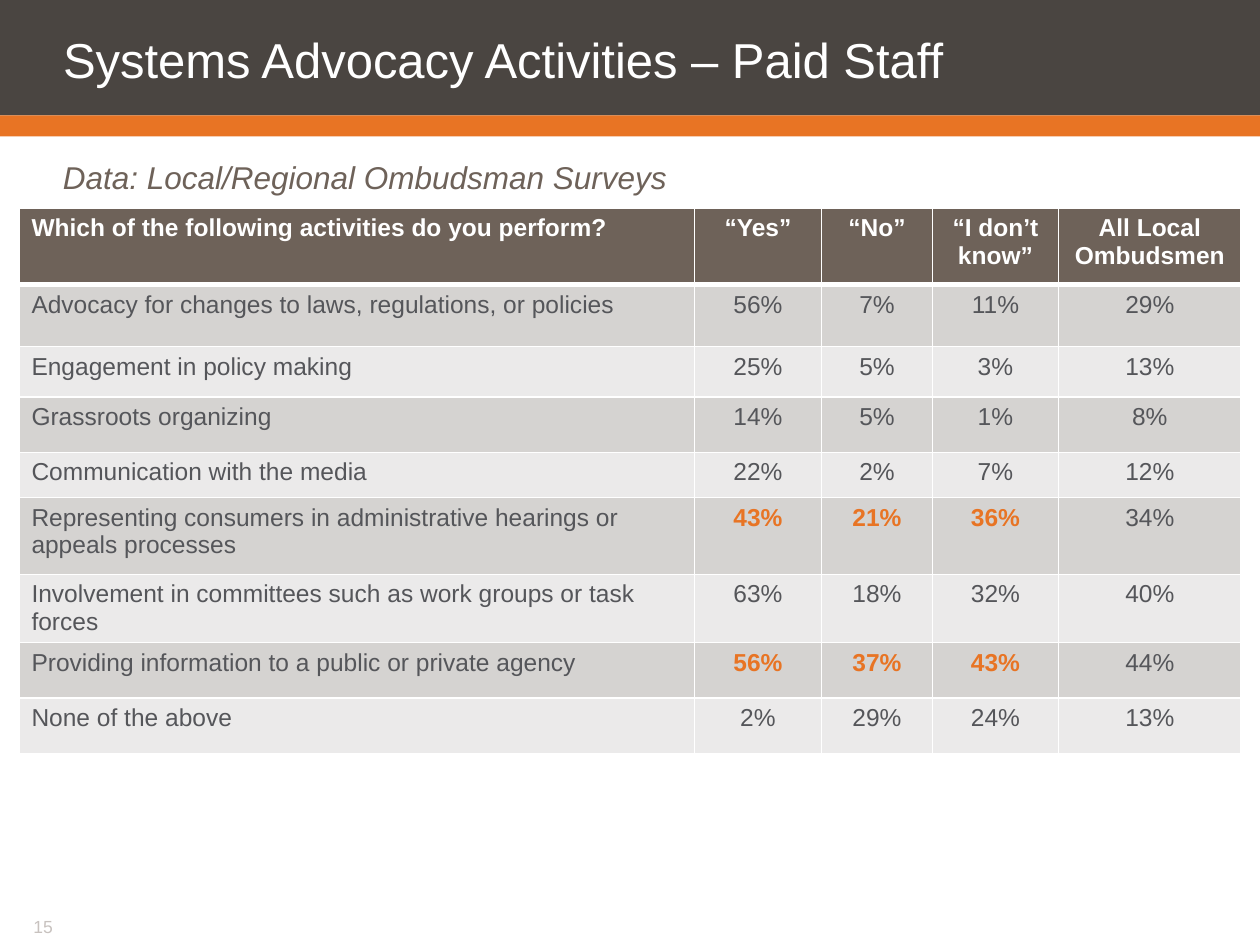
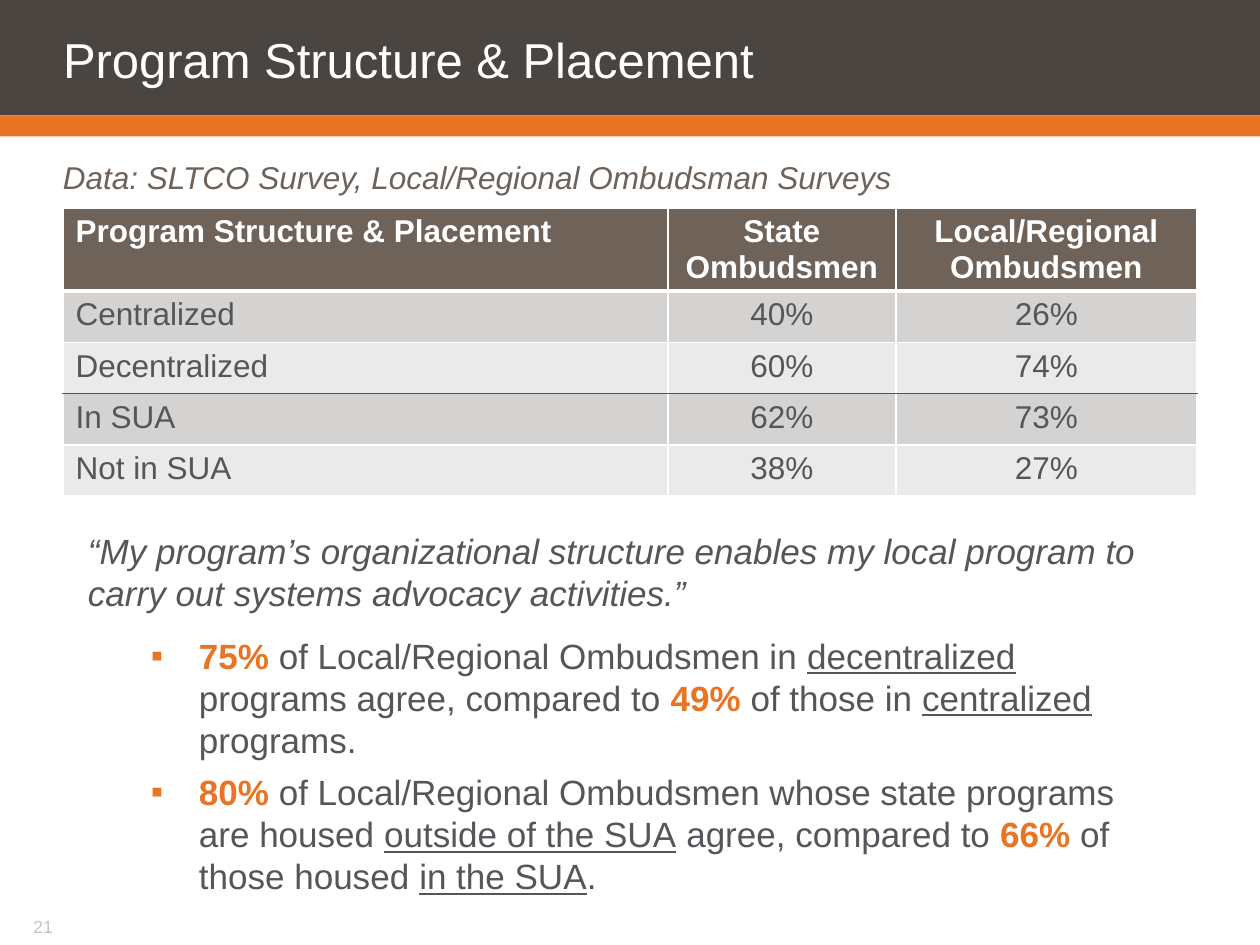
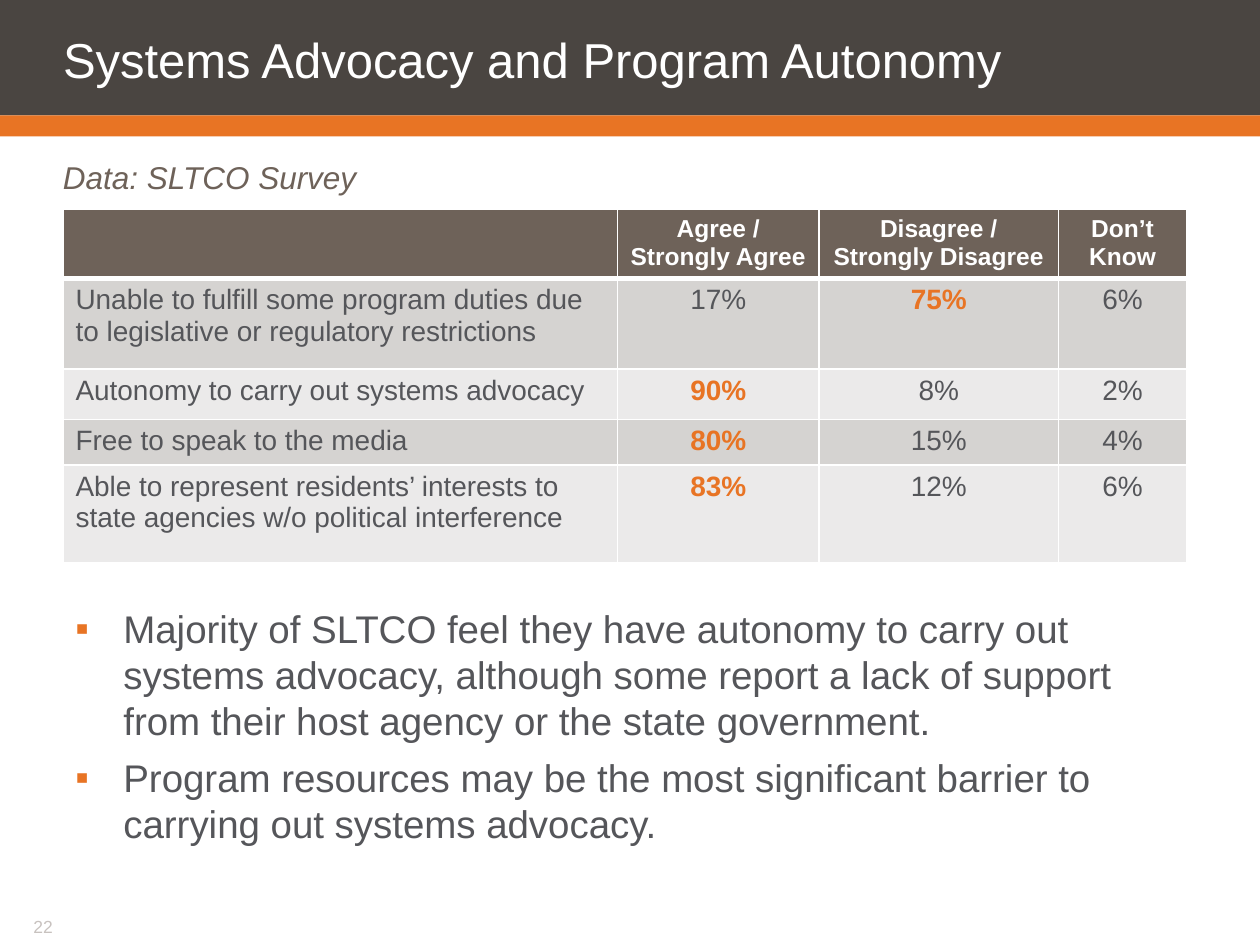
from lxml.etree import SubElement
from pptx import Presentation
from pptx.dml.color import RGBColor
from pptx.enum.shapes import MSO_SHAPE
from pptx.enum.text import MSO_ANCHOR, MSO_AUTO_SIZE, PP_ALIGN
from pptx.oxml.ns import qn
from pptx.util import Pt

FONT = "Arial"
DARK, ORANGE, BROWN, INK = "4A4541", "E87424", "6E6259", "55565A"
WHITE, GREY = "FFFFFF", "C8C2BF"
ROW_FILLS = ("EBEAEA", "D5D3D1")

KEY = dict(bold=True, color=ORANGE)
UNDER = dict(underline=True)
QUOTE = dict(italic=True)


def add_run(p, text, size=18, color=INK, bold=False, italic=False, underline=False):
    r = p.add_run()
    r.text = text
    r.font.name = FONT
    r.font.size = Pt(size)
    r.font.color.rgb = RGBColor.from_string(color)
    r.font.bold = bold
    r.font.italic = italic
    r.font.underline = underline


def set_frame(tf, left=7.2, top=3.6, right=7.2, bottom=3.6, anchor=MSO_ANCHOR.TOP):
    """Set wrapping, insets and anchor; return the first paragraph."""
    tf.word_wrap = True
    tf.auto_size = MSO_AUTO_SIZE.NONE
    tf.margin_left, tf.margin_top = Pt(left), Pt(top)
    tf.margin_right, tf.margin_bottom = Pt(right), Pt(bottom)
    tf.vertical_anchor = anchor
    p = tf.paragraphs[0]
    p.alignment = PP_ALIGN.LEFT
    return p


# A leading * marks a highlighted table value.
# Body paragraphs are (left indent, space after, runs); an indent means a bullet.
SLIDES = [
    dict(
        number="15",
        title="Systems Advocacy Activities – Paid Staff",
        source="Data: Local/Regional Ombudsman Surveys",
        table_at=(10.8, 118.8),
        cols=(386, 72.7, 63.4, 72, 104.4),
        heights=(43.9, 35.3, 28.8, 31.7, 25.9, 43.9, 38.9, 31.7, 31.7),
        head_size=14, cell_size=14, rule_above=None,
        rows=[
            ("Which of the following activities do you perform?",
             "“Yes”", "“No”", "“I don’t know”", "All Local Ombudsmen"),
            ("Advocacy for changes to laws, regulations, or policies",
             "56%", "7%", "11%", "29%"),
            ("Engagement in policy making", "25%", "5%", "3%", "13%"),
            ("Grassroots organizing", "14%", "5%", "1%", "8%"),
            ("Communication with the media", "22%", "2%", "7%", "12%"),
            ("Representing consumers in administrative hearings or appeals processes",
             "*43%", "*21%", "*36%", "34%"),
            ("Involvement in committees such as work groups or task forces",
             "63%", "18%", "32%", "40%"),
            ("Providing information to a public or private agency",
             "*56%", "*37%", "*43%", "44%"),
            ("None of the above", "2%", "29%", "24%", "13%"),
        ],
        body_at=None, body_size=None, body=[],
    ),
    dict(
        number="21",
        title="Program Structure & Placement",
        source="Data: SLTCO Survey, Local/Regional Ombudsman Surveys",
        table_at=(36, 118.8),
        cols=(345.6, 130.3, 172.1),
        heights=(47.5, 29.3, 29.3, 29.3, 29.3),
        head_size=18, cell_size=18, rule_above=3,
        rows=[
            ("Program Structure & Placement", "State Ombudsmen",
             "Local/Regional Ombudsmen"),
            ("Centralized", "40%", "26%"),
            ("Decentralized", "60%", "74%"),
            ("In SUA", "62%", "73%"),
            ("Not in SUA", "38%", "27%"),
        ],
        body_at=(43.2, 298.8, 633.6, 195), body_size=20,
        body=[
            (0, 12, [("“My program’s organizational structure enables my local "
                      "program to carry out systems advocacy activities.”", QUOTE)]),
            (63.4, 6, [("75%", KEY), (" of Local/Regional Ombudsmen in ", {}),
                       ("decentralized", UNDER), (" programs agree, compared to ", {}),
                       ("49%", KEY), (" of those in ", {}),
                       ("centralized", UNDER), (" programs.", {})]),
            (63.4, 6, [("80%", KEY),
                       (" of Local/Regional Ombudsmen whose state programs are housed ", {}),
                       ("outside of the SUA", UNDER), (" agree, compared to ", {}),
                       ("66%", KEY), (" of those housed ", {}),
                       ("in the SUA", UNDER), (".", {})]),
        ],
    ),
    dict(
        number="22",
        title="Systems Advocacy and Program Autonomy",
        source="Data: SLTCO Survey",
        table_at=(36, 119.5),
        cols=(316.8, 115.2, 136.8, 73.4),
        heights=(39.6, 51.8, 28.8, 25.9, 56.2),
        head_size=14, cell_size=16, rule_above=None,
        rows=[
            ("", "Agree / Strongly Agree", "Disagree / Strongly Disagree", "Don’t Know"),
            ("Unable to fulfill some program duties due to legislative or "
             "regulatory restrictions", "17%", "*75%", "6%"),
            ("Autonomy to carry out systems advocacy", "*90%", "8%", "2%"),
            ("Free to speak to the media", "*80%", "15%", "4%"),
            ("Able to represent residents’ interests to state agencies w/o "
             "political interference", "*83%", "12%", "6%"),
        ],
        body_at=(36, 342, 642.2, 147), body_size=22,
        body=[
            (27.4, 6, [("Majority of SLTCO feel they have autonomy to carry out systems "
                        "advocacy, although some report a lack of support from their "
                        "host agency or the state government.", {})]),
            (27.4, 0, [("Program resources may be the most significant barrier to "
                        "carrying out systems advocacy.", {})]),
        ],
    ),
]

prs = Presentation()
prs.slide_width, prs.slide_height = Pt(720), Pt(540)

for d in SLIDES:
    s = prs.slides.add_slide(prs.slide_layouts[5])

    # Bands, placed behind the title
    title = s.shapes.title
    for top, height, color in ((0, 66, DARK), (66, 12, ORANGE)):
        band = s.shapes.add_shape(MSO_SHAPE.RECTANGLE, 0, Pt(top), Pt(720), Pt(height))
        band.shadow.inherit = False
        band.fill.solid()
        band.fill.fore_color.rgb = RGBColor.from_string(color)
        band.line.fill.background()
        title.element.addprevious(band.element)

    # Title, data source and page number
    title.left, title.top, title.width, title.height = 0, 0, Pt(720), Pt(66)
    p = set_frame(title.text_frame, 36, 7.2, 7.2, 0, MSO_ANCHOR.MIDDLE)
    p.line_spacing = Pt(28)
    add_run(p, d["title"], size=28, color=WHITE)

    source = s.shapes.add_textbox(0, Pt(87.8), Pt(720), Pt(24))
    p = set_frame(source.text_frame, 36, 2.2, 0, 0)
    add_run(p, d["source"], color=BROWN, italic=True)

    number = s.shapes.add_textbox(Pt(12), Pt(523.4), Pt(138), Pt(13))
    p = set_frame(number.text_frame, 7.2, 0, 7.2, 3.6)
    add_run(p, d["number"], size=10, color=GREY)

    # Table
    rows, cols, heights = d["rows"], d["cols"], d["heights"]
    left, top = d["table_at"]
    table = s.shapes.add_table(len(rows), len(cols), Pt(left), Pt(top),
                               Pt(sum(cols)), Pt(sum(heights))).table
    for column, width in zip(table.columns, cols):
        column.width = Pt(width)
    for row, height in zip(table.rows, heights):
        row.height = Pt(height)

    edges = [(WHITE, 1)] * (len(rows) + 1)
    edges[1] = (WHITE, 3)
    if d["rule_above"]:
        edges[d["rule_above"]] = (INK, 1)

    for i, values in enumerate(rows):
        for j, value in enumerate(values):
            cell = table.cell(i, j)
            tcPr = cell._tc.get_or_add_tcPr()
            for tag, (color, width) in (("a:lnL", (WHITE, 1)), ("a:lnR", (WHITE, 1)),
                                        ("a:lnT", edges[i]), ("a:lnB", edges[i + 1])):
                ln = SubElement(tcPr, qn(tag), w=str(Pt(width)))
                SubElement(SubElement(ln, qn("a:solidFill")), qn("a:srgbClr"), val=color)
            cell.fill.solid()
            fill = ROW_FILLS[i % 2] if i else BROWN
            cell.fill.fore_color.rgb = RGBColor.from_string(fill)

            p = cell.text_frame.paragraphs[0]
            p.alignment = PP_ALIGN.CENTER if j else PP_ALIGN.LEFT
            if i == 0 and value:
                add_run(p, value, size=d["head_size"], color=WHITE, bold=True)
            elif value:
                style = KEY if value.startswith("*") else {}
                add_run(p, value.lstrip("*"), size=d["cell_size"], **style)

    # Findings below the table
    if d["body"]:
        body = s.shapes.add_textbox(*map(Pt, d["body_at"]))
        tf = body.text_frame
        p = set_frame(tf)
        for k, (indent, after, runs) in enumerate(d["body"]):
            if k:
                p = tf.add_paragraph()
            p.space_after = Pt(after)
            if indent:
                pPr = p._p.get_or_add_pPr()
                pPr.set("marL", str(Pt(indent)))
                pPr.set("indent", str(Pt(-27.4)))
                SubElement(SubElement(pPr, qn("a:buClr")), qn("a:srgbClr"), val=ORANGE)
                SubElement(pPr, qn("a:buFont"), typeface=FONT)
                SubElement(pPr, qn("a:buChar"), char="▪")
            for text, style in runs:
                add_run(p, text, size=d["body_size"], **style)

prs.save("out.pptx")
